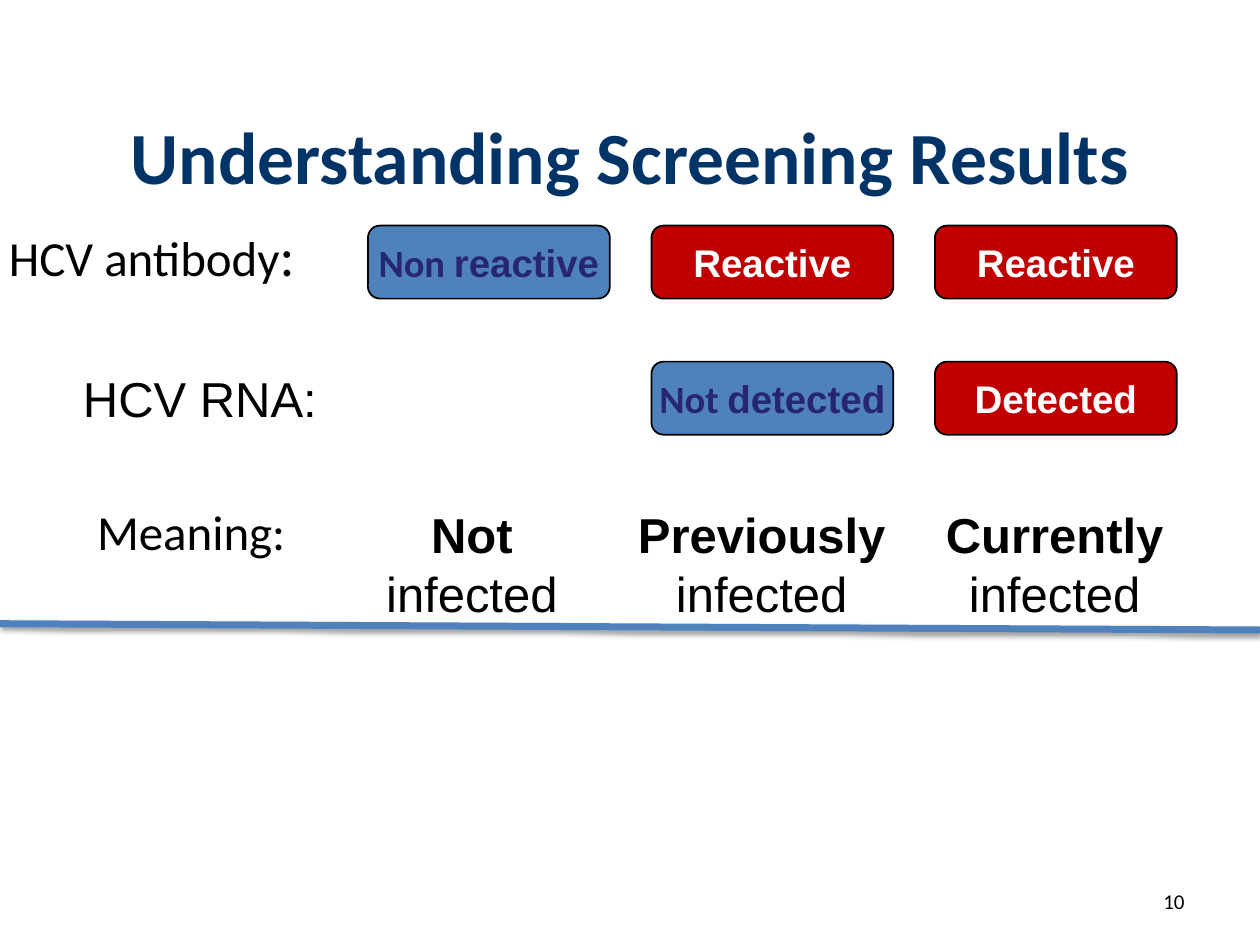
from lxml.etree import SubElement
from pptx import Presentation
from pptx.dml.color import RGBColor
from pptx.enum.shapes import MSO_CONNECTOR, MSO_SHAPE
from pptx.enum.text import MSO_ANCHOR, MSO_AUTO_SIZE, PP_ALIGN
from pptx.oxml.ns import qn
from pptx.util import Inches, Pt


def color(value):
    return RGBColor.from_string(value)


def write(para, text, font="Arial", size=28, fill="000000", bold=False, align=PP_ALIGN.LEFT):
    para.alignment = align
    span = para.add_run()
    span.text = text
    span.font.name = font
    span.font.size = Pt(size)
    span.font.bold = bold
    span.font.color.rgb = color(fill)


deck = Presentation()
deck.slide_width, deck.slide_height = Inches(10), Inches(7.5)
page = deck.slides.add_slide(deck.slide_layouts[1])
width, height = deck.slide_width, deck.slide_height

title = page.shapes.title
title.left, title.top, title.width, title.height = 0, Inches(0.75), width, Inches(0.96)
title.text_frame.auto_size = MSO_AUTO_SIZE.NONE
title.text_frame.vertical_anchor = MSO_ANCHOR.MIDDLE
write(title.text_frame.paragraphs[0], "Understanding Screening Results",
      font="Calibri", size=42, fill="003366", bold=True, align=PP_ALIGN.CENTER)

body = page.placeholders[1]
body.left, body.top, body.width, body.height = 0, Inches(1.7), width, Inches(4.15)
frame = body.text_frame
frame.auto_size = MSO_AUTO_SIZE.NONE
frame.margin_left = Inches(0.07)
antibody, meaning = frame.paragraphs[0], frame.add_paragraph()
write(antibody, "HCV antibody", font="Calibri")
write(antibody, ":", font="Calibri", size=32)
write(meaning, "Meaning:", font="Calibri")
for para, indent, before in [(antibody, 0, 2), (meaning, 0.7, 122)]:
    para.space_before = Pt(before)
    properties = para._p.get_or_add_pPr()
    properties.set("marL", str(Inches(indent)))
    properties.set("indent", "0")
    SubElement(properties, qn("a:buNone"))

number = page.shapes.add_textbox(Inches(7.17), Inches(6.95), Inches(2.33), Inches(0.4))
number.text_frame.word_wrap = True
number.text_frame.vertical_anchor = MSO_ANCHOR.MIDDLE
write(number.text_frame.paragraphs[0], "10", font="Calibri", size=12, align=PP_ALIGN.RIGHT)

first_column, column_step = Inches(2.92), Inches(2.25)
first_row, row_step = Inches(1.79), Inches(1.08)
results = [
    (0, 0, "Non ", "reactive"),
    (1, 0, "", "Reactive"),
    (2, 0, "", "Reactive"),
    (1, 1, "Not ", "detected"),
    (2, 1, "", "Detected"),
]
for column, row, negation, result in results:
    box = page.shapes.add_shape(
        MSO_SHAPE.FLOWCHART_ALTERNATE_PROCESS,
        first_column + column * column_step, first_row + row * row_step,
        Inches(1.92), Inches(0.58))
    box.shadow.inherit = False
    box.fill.solid()
    box.fill.fore_color.rgb = color("4F81BD" if negation else "C00000")
    box.line.color.rgb = color("000000")
    box.line.width = Pt(1)
    box.text_frame.word_wrap = False
    box.text_frame.vertical_anchor = MSO_ANCHOR.MIDDLE
    para = box.text_frame.paragraphs[0]
    ink = "262673" if negation else "FFFFFF"
    if negation:
        write(para, negation, font="Calibri", size=22, fill=ink, bold=True, align=PP_ALIGN.CENTER)
    write(para, result, size=22, fill=ink, bold=True, align=PP_ALIGN.CENTER)

captions = [
    (2.83, 3.95, 1.83, 1.04, "Not", " infected"),
    (4.92, 3.95, 2.25, 1.04, "Previously", " infected"),
    (7.33, 3.95, 2.08, 1.04, "Currently", " infected"),
    (0.56, 2.87, 2.08, 0.57, "", "HCV RNA:"),
]
for left, top, across, down, status, text in captions:
    box = page.shapes.add_textbox(Inches(left), Inches(top), Inches(across), Inches(down))
    box.text_frame.word_wrap = bool(status)
    para = box.text_frame.paragraphs[0]
    para.line_spacing = Pt(34)
    align = PP_ALIGN.CENTER if status else PP_ALIGN.LEFT
    if status:
        write(para, status, bold=True, align=align)
    write(para, text, align=align)

rule = page.shapes.add_connector(MSO_CONNECTOR.STRAIGHT, 0, Inches(4.95), width, Inches(5))
rule.line.color.rgb = color("4F81BD")
rule.line.width = Pt(4)
effects = SubElement(rule._element.spPr, qn("a:effectLst"))
shadow = SubElement(effects, qn("a:outerShdw"), blurRad=str(Pt(3.1)), dist=str(Pt(1.6)),
                    dir="5400000", rotWithShape="0")
shade = SubElement(shadow, qn("a:srgbClr"), val="000000")
SubElement(shade, qn("a:alpha"), val="38000")

deck.save("out.pptx")
